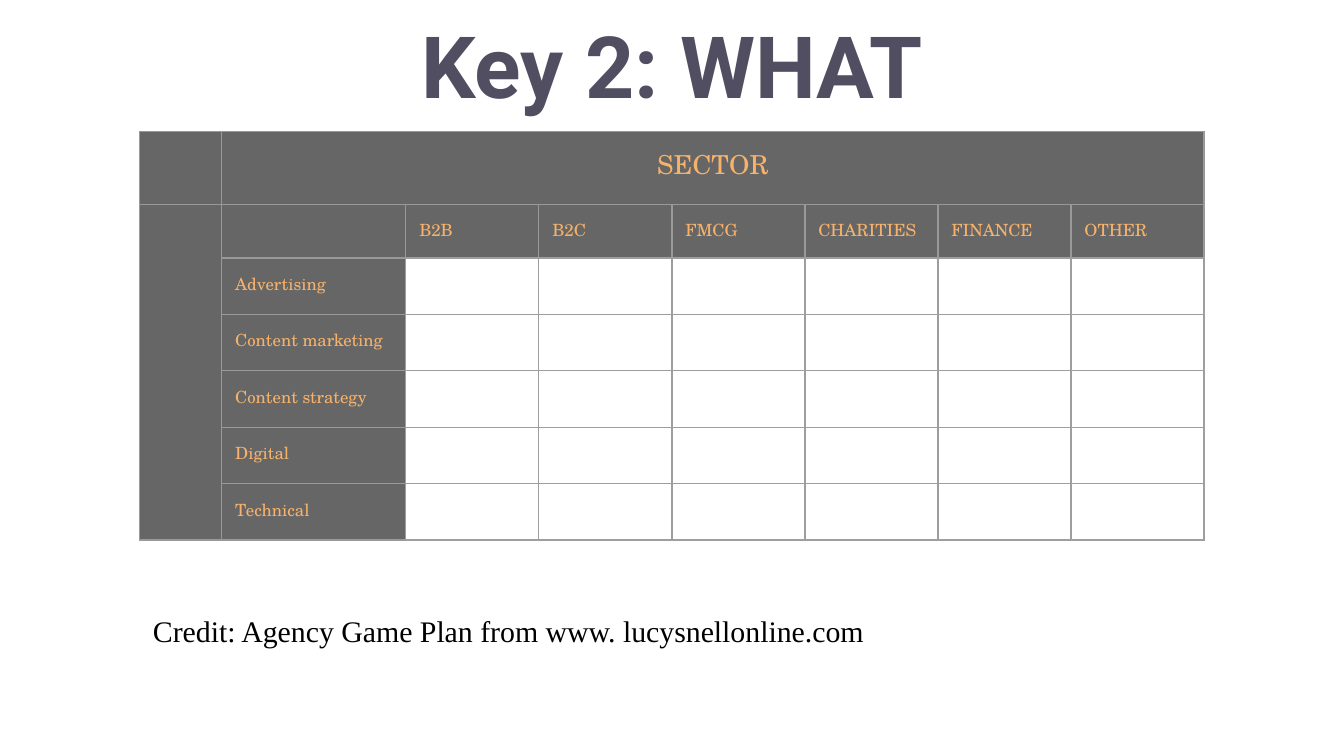
import pptx
import pptx.util
import pptx.dml.color
import pptx.enum.text
import pptx.oxml.ns
from lxml import etree

Inches, Pt = pptx.util.Inches, pptx.util.Pt
ALIGN = pptx.enum.text.PP_ALIGN
ANCHOR = pptx.enum.text.MSO_ANCHOR

# Content
TITLE = "Key 2: WHAT"
CREDIT = "Credit: Agency Game Plan from www. lucysnellonline.com"
GROUP = "SECTOR"
SECTORS = ["B2B", "B2C", "FMCG", "CHARITIES", "FINANCE", "OTHER"]
SERVICES = ["Advertising", "Content marketing", "Content strategy", "Digital", "Technical"]

COLORS = {
    "title": "514E61",
    "header": "666666",
    "label": "F6B26B",
    "header_line": "999999",
    "grid_line": "9E9E9E",
    "credit": "000000",
}
TABLE_FONT = "TeX Gyre Schola"
COLUMN_WIDTHS = [0.61, 1.37] + [0.99] * len(SECTORS)
ROW_HEIGHTS = [0.54, 0.4] + [0.42] * len(SERVICES)


def write(frame, text, font, size, color, bold=False, align=ALIGN.LEFT):
    frame.text = text
    para = frame.paragraphs[0]
    para.alignment = align
    span = para.runs[0]
    span.font.name = font
    span.font.size = Pt(size)
    span.font.bold = bold
    span.font.color.rgb = pptx.dml.color.RGBColor.from_string(COLORS[color])


def add_text(page, place, inset, anchor, *args, **kwargs):
    box = page.shapes.add_textbox(*map(Inches, place))
    frame = box.text_frame
    frame.word_wrap = True
    frame.vertical_anchor = anchor
    frame.margin_left = frame.margin_right = Inches(inset)
    frame.margin_top = frame.margin_bottom = Inches(inset)
    write(frame, *args, **kwargs)


def draw_borders(cell, color):
    qn = pptx.oxml.ns.qn
    properties = cell._tc.get_or_add_tcPr()
    for side in ("a:lnL", "a:lnR", "a:lnT", "a:lnB"):
        line = etree.SubElement(properties, qn(side), w=str(Pt(0.75)))
        fill = etree.SubElement(line, qn("a:solidFill"))
        etree.SubElement(fill, qn("a:srgbClr"), val=COLORS[color])


def label_cell(cell, text, size, align=ALIGN.LEFT):
    cell.margin_left = cell.margin_right = Inches(0.1)
    cell.margin_top = cell.margin_bottom = Inches(0.1)
    write(cell.text_frame, text, TABLE_FONT, size, "label", align=align)


# Widescreen page, 16:9
deck = pptx.Presentation()
deck.slide_width = Inches(10)
deck.slide_height = deck.slide_width * 9 // 16
page = deck.slides.add_slide(deck.slide_layouts[6])

# Title
add_text(page, (0.73, 0.25, 8.54, 0.46), 0.04, ANCHOR.MIDDLE,
         TITLE, "Roboto", 46, "title", bold=True, align=ALIGN.CENTER)

# Table grid
holder = page.shapes.add_table(
    len(ROW_HEIGHTS), len(COLUMN_WIDTHS), Inches(1.04), Inches(0.98),
    Inches(sum(COLUMN_WIDTHS)), Inches(sum(ROW_HEIGHTS)))
table = holder.table
table.first_row = table.horz_banding = False
for column, width in zip(table.columns, COLUMN_WIDTHS):
    column.width = Inches(width)
for row, height in zip(table.rows, ROW_HEIGHTS):
    row.height = Inches(height)

# Header band and open cells
for r in range(len(ROW_HEIGHTS)):
    for c in range(len(COLUMN_WIDTHS)):
        cell = table.cell(r, c)
        is_header = r < 2 or c < 2
        draw_borders(cell, "header_line" if is_header else "grid_line")
        if is_header:
            cell.fill.solid()
            cell.fill.fore_color.rgb = pptx.dml.color.RGBColor.from_string(COLORS["header"])
        else:
            cell.fill.background()

# Merged cells and labels
table.cell(0, 1).merge(table.cell(0, len(COLUMN_WIDTHS) - 1))
table.cell(1, 0).merge(table.cell(len(ROW_HEIGHTS) - 1, 0))
label_cell(table.cell(0, 1), GROUP, 14, ALIGN.CENTER)
for c, sector in enumerate(SECTORS, start=2):
    label_cell(table.cell(1, c), sector, 9)
for r, service in enumerate(SERVICES, start=2):
    label_cell(table.cell(r, 1), service, 9)

# Credit
add_text(page, (1.04, 4.46, 9.06, 0.46), 0.1, ANCHOR.TOP,
         CREDIT, "Times New Roman", 16, "credit")

deck.save("out.pptx")
